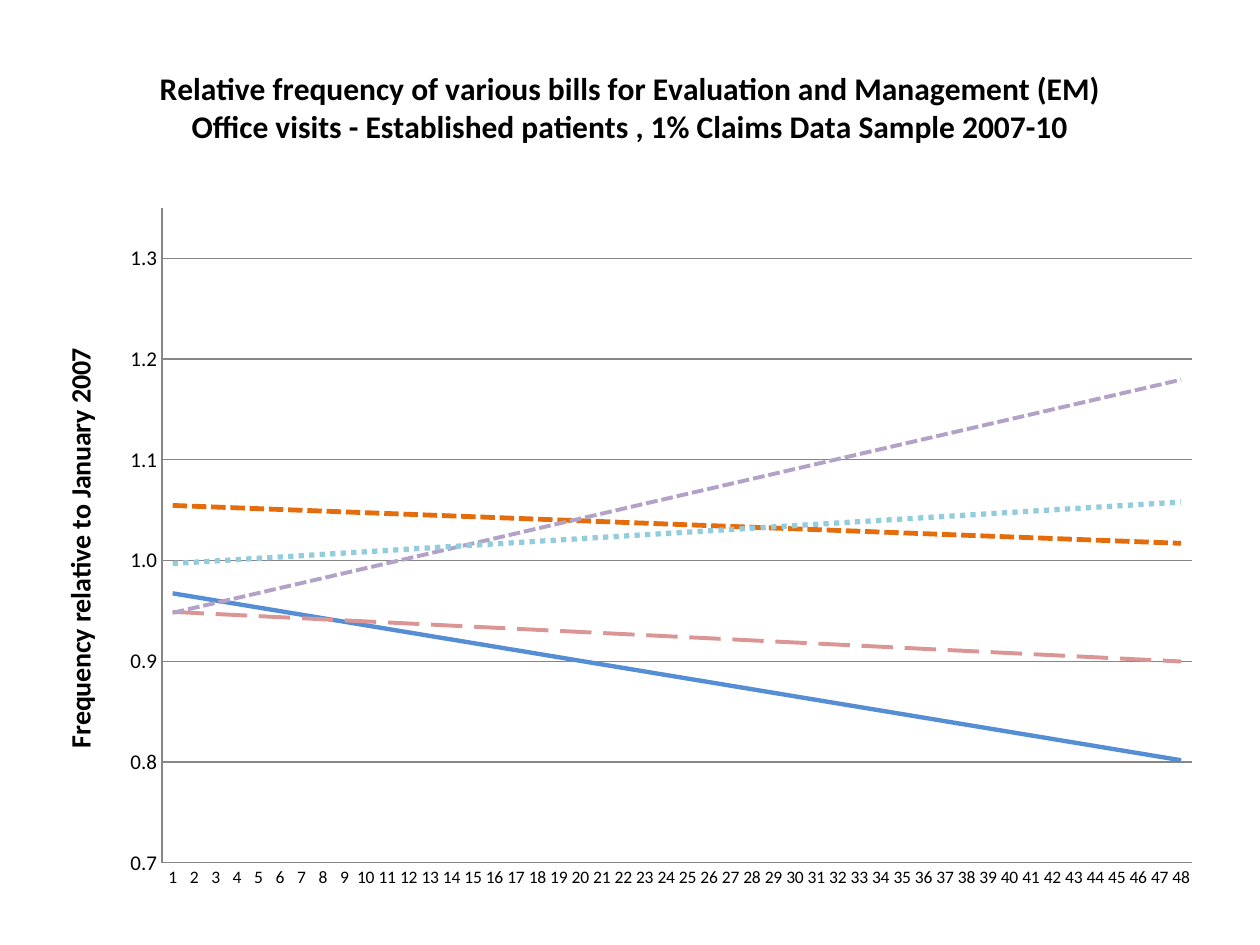
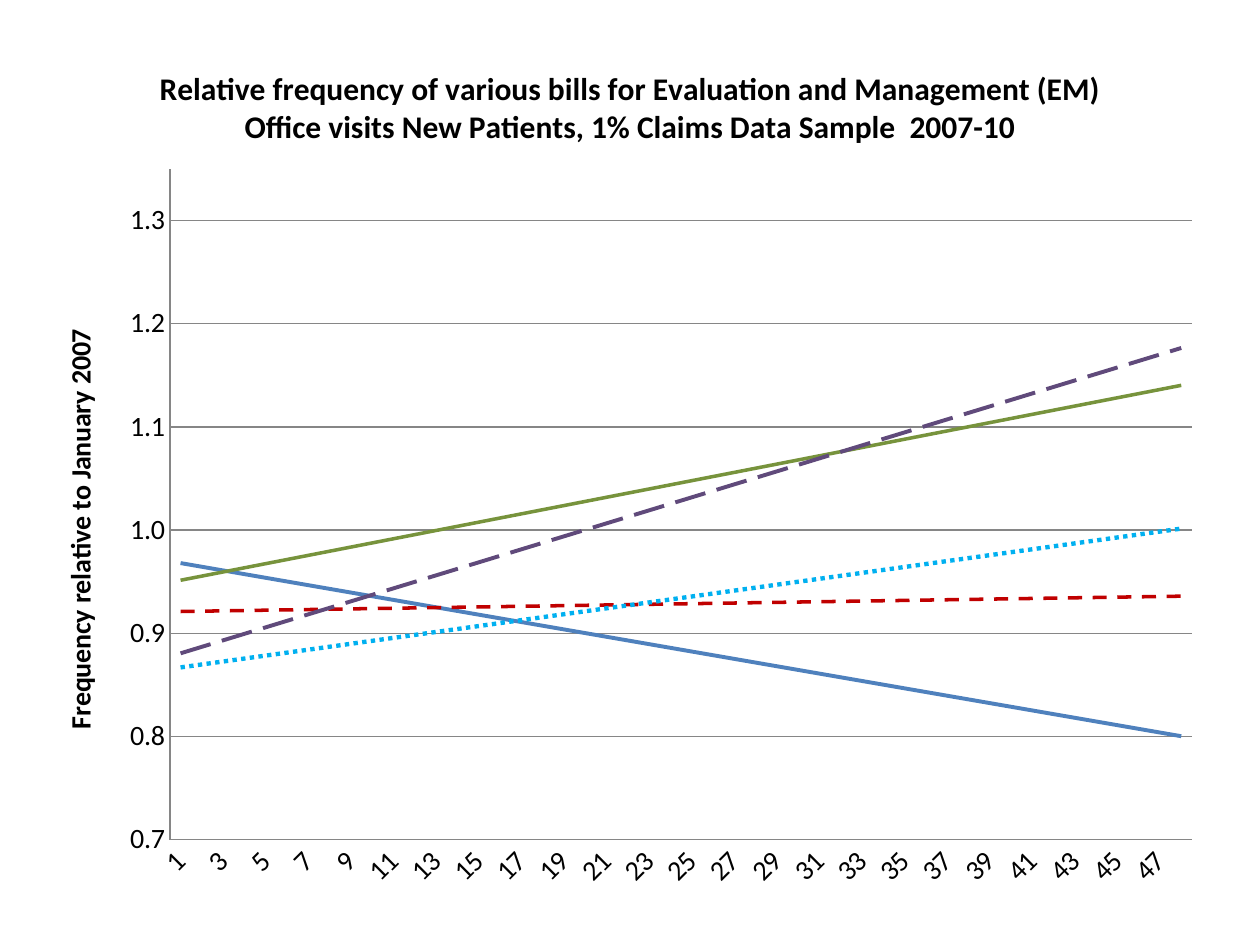
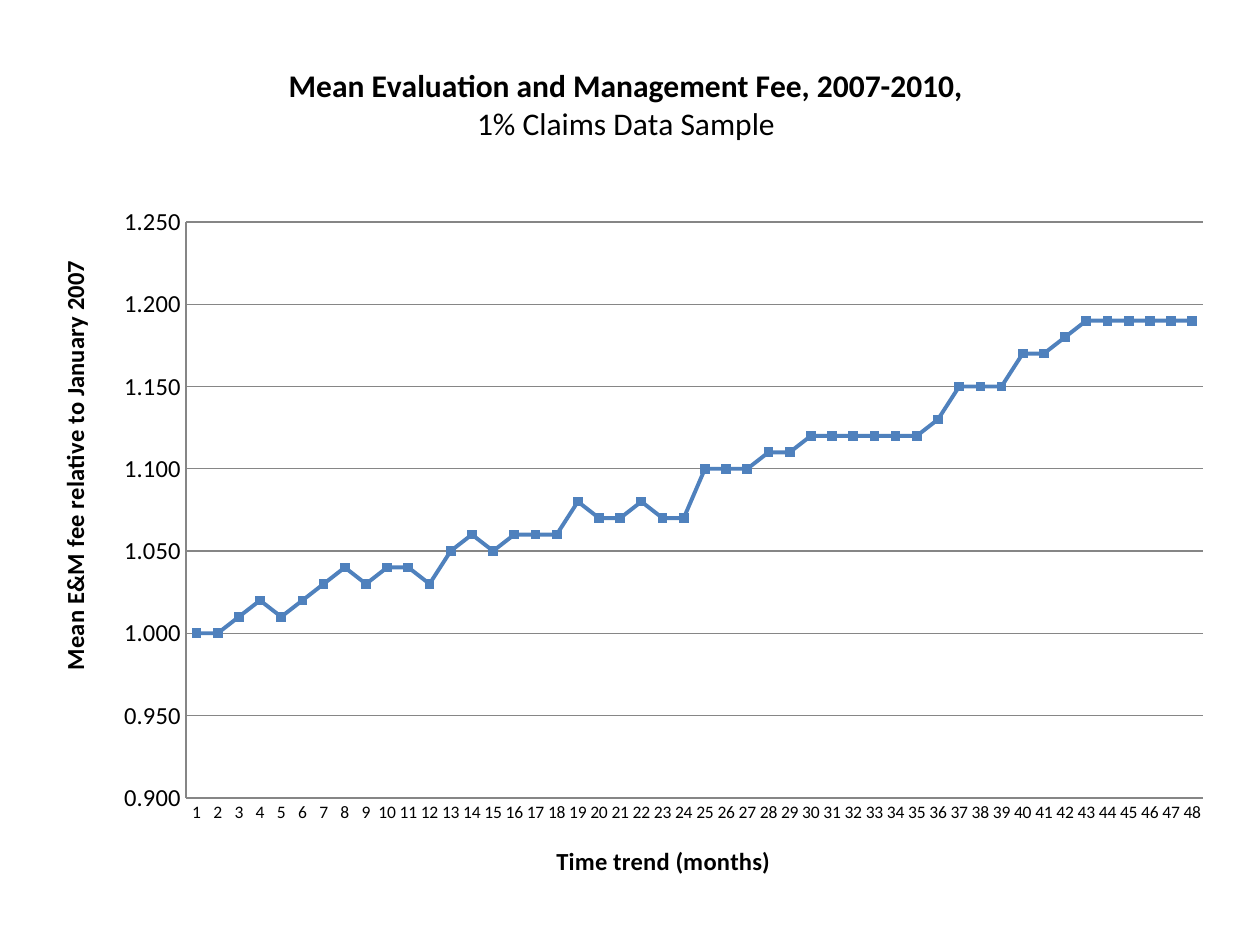
from lxml import etree
from pptx import Presentation
from pptx.chart.data import CategoryChartData
from pptx.dml.color import RGBColor
from pptx.enum.chart import XL_CHART_TYPE as CT, XL_MARKER_STYLE as MS, XL_TICK_MARK as TM
from pptx.oxml.ns import qn
from pptx.util import Emu, Pt

PX = 914400 // 126
LEFT, TOP, WIDTH, HEIGHT = 33, 39, 1193, 867
FONT = "Calibri"
MONTHS = [str(m) for m in range(1, 49)]
COLORS = {
    "text": "000000", "axis": "868686", "orange": "E46C0A", "sky": "558ED5",
    "rose": "D99694", "lilac": "B3A2C7", "aqua": "93CDDD", "blue": "4F81BD",
    "red": "C00000", "green": "77933C", "purple": "604A7B", "cyan": "00B0F0",
}
ESTABLISHED = [
    [1, 1, 1.04, 0.97, 0.98, 1.01, 1, 1.06, 0.94, 1.3, 1.19, 0.98,
     1.07, 1.05, 0.96, 1.05, 0.99, 1.02, 1.03, 1.02, 1.02, 1.27, 1.03, 1,
     1.01, 1.05, 1.08, 1.08, 0.98, 1.11, 1.1, 1.07, 1.23, 1.24, 1.1, 1.04,
     0.93, 0.98, 1.03, 0.97, 0.87, 1.03, 0.93, 0.97, 0.98, 1.03, 1.04, 0.89],
    [1, 0.99, 0.96, 0.94, 0.96, 0.92, 0.89, 0.97, 0.86, 0.98, 0.95, 0.8,
     0.95, 0.95, 0.91, 0.94, 0.9, 0.91, 0.91, 0.84, 0.93, 0.93, 0.82, 0.87,
     0.86, 0.93, 0.92, 0.94, 0.85, 0.94, 0.88, 0.85, 0.91, 0.93, 0.85, 0.84,
     0.77, 0.84, 0.88, 0.86, 0.76, 0.85, 0.78, 0.82, 0.8, 0.77, 0.8, 0.75],
    [1, 1.04, 0.99, 0.93, 0.92, 0.85, 0.8, 0.86, 0.84, 0.97, 0.96, 0.85,
     1.03, 1.11, 0.97, 0.99, 0.9, 0.88, 0.84, 0.8, 0.91, 0.95, 0.87, 0.94,
     0.94, 1.08, 1.04, 0.99, 0.9, 0.94, 0.86, 0.85, 0.98, 1.04, 0.95, 0.93,
     0.88, 0.98, 1.02, 0.92, 0.84, 0.89, 0.78, 0.83, 0.87, 0.85, 0.91, 0.9],
    [1, 1.01, 0.99, 0.95, 0.95, 0.9, 0.86, 0.93, 0.88, 1.06, 0.99, 0.87,
     1.11, 1.15, 1.03, 1.1, 0.99, 0.98, 0.97, 0.93, 1.06, 1.09, 0.98, 1.05,
     1.09, 1.24, 1.19, 1.16, 1.05, 1.13, 1.04, 1.03, 1.15, 1.21, 1.12, 1.11,
     1.1, 1.21, 1.28, 1.18, 1.08, 1.16, 1.01, 1.08, 1.16, 1.12, 1.19, 1.14],
    [1, 0.96, 1.05, 0.98, 1, 0.96, 0.93, 0.99, 0.91, 1.04, 0.98, 0.81,
     1.08, 1.09, 1.01, 1.11, 1.05, 1.03, 1.06, 0.94, 1.06, 1.1, 0.94, 1.01,
     1.05, 1.17, 1.14, 1.11, 1, 1.11, 1.05, 1.03, 1.09, 1.06, 1.02, 1.01,
     0.97, 1.07, 1.19, 1.1, 0.97, 1.08, 0.96, 0.98, 1.02, 0.99, 1.05, 1.01],
]
NEW = [
    [1, 0.93, 0.89, 0.93, 0.98, 0.97, 1.01, 1.1, 0.91, 0.9, 0.92, 0.75,
     0.93, 0.93, 0.95, 0.9, 0.83, 0.93, 1, 0.88, 0.96, 0.88, 0.78, 0.83,
     0.8, 0.96, 0.94, 0.93, 0.89, 0.96, 0.92, 0.87, 0.9, 0.87, 0.82, 0.79,
     0.77, 0.77, 0.88, 0.78, 0.77, 0.87, 0.76, 0.89, 0.82, 0.81, 0.83, 0.75],
    [1, 0.98, 0.92, 0.95, 0.91, 0.89, 0.88, 0.96, 0.88, 0.96, 0.92, 0.79,
     0.93, 1.03, 0.92, 0.96, 0.86, 0.86, 0.92, 0.83, 0.93, 0.91, 0.79, 0.8,
     0.92, 1.06, 1.06, 1.01, 0.91, 0.97, 0.97, 0.93, 1.03, 1.02, 0.9, 0.83,
     0.86, 0.98, 1.05, 0.91, 0.88, 0.95, 0.91, 0.93, 0.94, 0.93, 0.93, 0.91],
    [1, 1.03, 1.03, 0.99, 0.92, 0.94, 0.92, 0.98, 0.92, 1.07, 0.93, 0.82,
     1.09, 1.16, 1.04, 1.04, 0.99, 0.98, 1.01, 0.95, 1.03, 1.02, 0.89, 0.9,
     1.04, 1.17, 1.14, 1.12, 1.03, 1.1, 1.06, 1.06, 1.11, 1.18, 1.02, 0.96,
     1.04, 1.15, 1.2, 1.14, 1.06, 1.17, 1.1, 1.14, 1.17, 1.13, 1.17, 1.09],
    [1, 0.92, 0.99, 0.91, 0.9, 0.83, 0.86, 0.95, 0.85, 0.97, 0.9, 0.72,
     1.11, 1.07, 0.95, 1.01, 0.96, 0.99, 0.98, 0.93, 1.03, 1.02, 0.87, 0.9,
     1.06, 1.2, 1.11, 1.13, 0.99, 1.09, 1.06, 1.01, 1.08, 1.09, 0.96, 0.9,
     1.08, 1.23, 1.25, 1.25, 1.11, 1.17, 1.09, 1.22, 1.22, 1.13, 1.23, 1.09],
    [1, 0.98, 0.86, 0.87, 0.91, 0.96, 0.8, 0.91, 0.72, 0.96, 0.85, 0.72,
     1.06, 1.02, 0.9, 1.04, 0.88, 0.95, 0.91, 0.87, 0.98, 0.86, 0.73, 0.76,
     0.94, 1.07, 0.9, 1.02, 0.84, 0.97, 0.95, 0.82, 0.86, 0.86, 0.87, 0.75,
     0.89, 1.13, 1.12, 1.06, 0.99, 1.07, 0.99, 1.06, 1.16, 1.01, 1.05, 0.96],
]
FEE = [
    [1, 1, 1.01, 1.02, 1.01, 1.02, 1.03, 1.04, 1.03, 1.04, 1.04, 1.03,
     1.05, 1.06, 1.05, 1.06, 1.06, 1.06, 1.08, 1.07, 1.07, 1.08, 1.07, 1.07,
     1.1, 1.1, 1.1, 1.11, 1.11, 1.12, 1.12, 1.12, 1.12, 1.12, 1.12, 1.13,
     1.15, 1.15, 1.15, 1.17, 1.17, 1.18, 1.19, 1.19, 1.19, 1.19, 1.19, 1.19],
]
ESTABLISHED_TRENDS = [("orange", 2.75, "sysDash"), ("sky", 2.5, "solid"), ("rose", 2.25, "lgDash"),
                      ("lilac", 2.25, "sysDash"), ("aqua", 3, "sysDot")]
NEW_TRENDS = [("blue", 2.25, "solid"), ("red", 2, "dash"), ("green", 2, "solid"),
              ("purple", 2.25, "lgDash"), ("cyan", 2.5, "sysDot")]


def rgb(name):
    """Return a named colour."""
    return RGBColor.from_string(COLORS[name])


def sub(parent, tag, **attrs):
    """Add an XML child with attributes."""
    el = etree.SubElement(parent, qn(tag))
    for key, value in attrs.items():
        el.set(key, str(value))
    return el


def make_layout(x, y, w=None, h=None):
    """Build a manual layout from slide px."""
    layout = etree.Element(qn("c:layout"))
    manual = sub(layout, "c:manualLayout")
    if w:
        sub(manual, "c:layoutTarget", val="inner")
    sub(manual, "c:xMode", val="edge")
    sub(manual, "c:yMode", val="edge")
    sub(manual, "c:x", val=round((x - LEFT) / WIDTH, 4))
    sub(manual, "c:y", val=round((y - TOP) / HEIGHT, 4))
    if w:
        sub(manual, "c:w", val=round(w / WIDTH, 4))
        sub(manual, "c:h", val=round(h / HEIGHT, 4))
    return layout


def write_text(tf, text, size=18, bold=True):
    """Write one paragraph and format its run."""
    p = tf.paragraphs[0] if not tf.text else tf.add_paragraph()
    r = p.add_run()
    r.text = text
    r.font.name, r.font.size, r.font.bold = FONT, Pt(size), bold
    r.font.color.rgb = rgb("text")


def place_title(title, x, y, rot=0):
    """Put a chart or axis title at its place."""
    el = title._element
    for old in el.findall(qn("c:layout")):
        el.remove(old)
    el.find(qn("c:tx")).addnext(make_layout(x, y))
    title.text_frame._txBody.find(qn("a:bodyPr")).set("rot", str(rot * 60000))


def add_axis_title(axis, text, size, x, y, rot=0):
    """Add a bold axis title."""
    write_text(axis.axis_title.text_frame, text, size=size)
    place_title(axis.axis_title, x, y, rot)


def add_trend(s, color, width, dash):
    """Add a linear trend line to a series."""
    trend = etree.Element(qn("c:trendline"))
    ln = sub(sub(trend, "c:spPr"), "a:ln", w=Pt(width))
    sub(sub(ln, "a:solidFill"), "a:srgbClr", val=COLORS[color])
    sub(ln, "a:prstDash", val=dash)
    sub(trend, "c:trendlineType", val="linear")
    sub(trend, "c:dispRSqr", val=0)
    sub(trend, "c:dispEq", val=0)
    s._element.find(qn("c:cat")).addprevious(trend)


def format_series(s, trend=None):
    """Show a series as its trend line or as a marked line."""
    s.smooth = False
    if trend:
        s.format.line.fill.background()
        s.marker.style = MS.NONE
        add_trend(s, *trend)
        return
    s.format.line.color.rgb = rgb("blue")
    s.format.line.width = Pt(2.25)
    s.marker.style, s.marker.size = MS.SQUARE, 5
    s.marker.format.fill.solid()
    s.marker.format.fill.fore_color.rgb = rgb("blue")
    s.marker.format.line.color.rgb = rgb("blue")


def format_axis(axis, size):
    """Set what both axes share."""
    axis.major_tick_mark = axis.minor_tick_mark = TM.NONE
    axis.tick_labels.font.size = Pt(size)
    axis.format.line.color.rgb = rgb("axis")
    axis.format.line.width = Pt(0.75)


def format_categories(axis, size, skip, rot):
    """Format the month axis."""
    format_axis(axis, size)
    axis._element.find(qn("c:txPr")).find(qn("a:bodyPr")).set("rot", str(rot * 60000))
    tick_skip = etree.Element(qn("c:tickLblSkip"), val=str(skip))
    axis._element.find(qn("c:noMultiLvlLbl")).addprevious(tick_skip)


def format_values(axis, size, low, high, step, number_format):
    """Format the value axis and its grid."""
    format_axis(axis, size)
    axis.minimum_scale, axis.maximum_scale, axis.major_unit = low, high, step
    axis.tick_labels.number_format = number_format
    axis.tick_labels.number_format_is_linked = False
    line = axis.major_gridlines.format.line
    line.color.rgb, line.width = rgb("axis"), Pt(0.75)


def add_line_chart(prs, rows, title, title_x, plot, trends=None, cat=(10, 1, 0),
                   val=(12, 0.7, 1.35, 0.1, "0.0")):
    """Add a slide that holds one line chart."""
    slide = prs.slides.add_slide(prs.slide_layouts[6])
    data = CategoryChartData()
    data.categories = MONTHS
    for i, row in enumerate(rows, 1):
        data.add_series(f"Series {i}", row)
    box = [Emu(n * PX) for n in (LEFT, TOP, WIDTH, HEIGHT)]
    chart = slide.shapes.add_chart(CT.LINE_MARKERS, *box, data).chart
    chart.has_legend = False
    chart.font.name, chart.font.size = FONT, Pt(10)
    chart.font.color.rgb = rgb("text")
    chart.plots[0].vary_by_categories = False
    for i, s in enumerate(chart.plots[0].series):
        format_series(s, trends[i] if trends else None)
    format_categories(chart.category_axis, *cat)
    format_values(chart.value_axis, *val)
    for text, bold in title:
        write_text(chart.chart_title.text_frame, text, bold=bold)
    place_title(chart.chart_title, title_x, 61)
    area = chart._chartSpace.chart.plotArea
    for old in area.findall(qn("c:layout")):
        area.remove(old)
    area.insert(0, make_layout(*plot))
    return chart


def main():
    """Build the three slides."""
    prs = Presentation()
    prs.slide_width, prs.slide_height = Emu(1260 * PX), Emu(945 * PX)
    heading = "Relative frequency of various bills for Evaluation and Management (EM) Office visits "
    frequency = "Frequency relative to January 2007"
    sample = "1% Claims Data Sample"

    chart = add_line_chart(
        prs, ESTABLISHED, [(f"{heading}- Established patients , {sample} 2007-10", True)],
        154, (162, 208, 1030, 655), ESTABLISHED_TRENDS)
    add_axis_title(chart.value_axis, frequency, 16, 56, 343, -90)

    chart = add_line_chart(
        prs, NEW, [(f"{heading}New Patients, {sample}  2007-10", True)],
        154, (170, 169, 1022, 671), NEW_TRENDS, cat=(16, 2, -45), val=(16, 0.7, 1.35, 0.1, "0.0"))
    add_axis_title(chart.value_axis, frequency, 16, 56, 324, -90)

    chart = add_line_chart(
        prs, FEE, [("Mean Evaluation and Management Fee, 2007-2010,", True), (sample, False)],
        285, (186, 222, 1017, 576), val=(14, 0.9, 1.25, 0.05, "0.000"))
    add_axis_title(chart.value_axis, "Mean E&M fee relative to January 2007", 14, 53, 256, -90)
    add_axis_title(chart.category_axis, "Time trend (months)", 14, 552, 840)

    prs.save("out.pptx")


if __name__ == "__main__":
    main()
